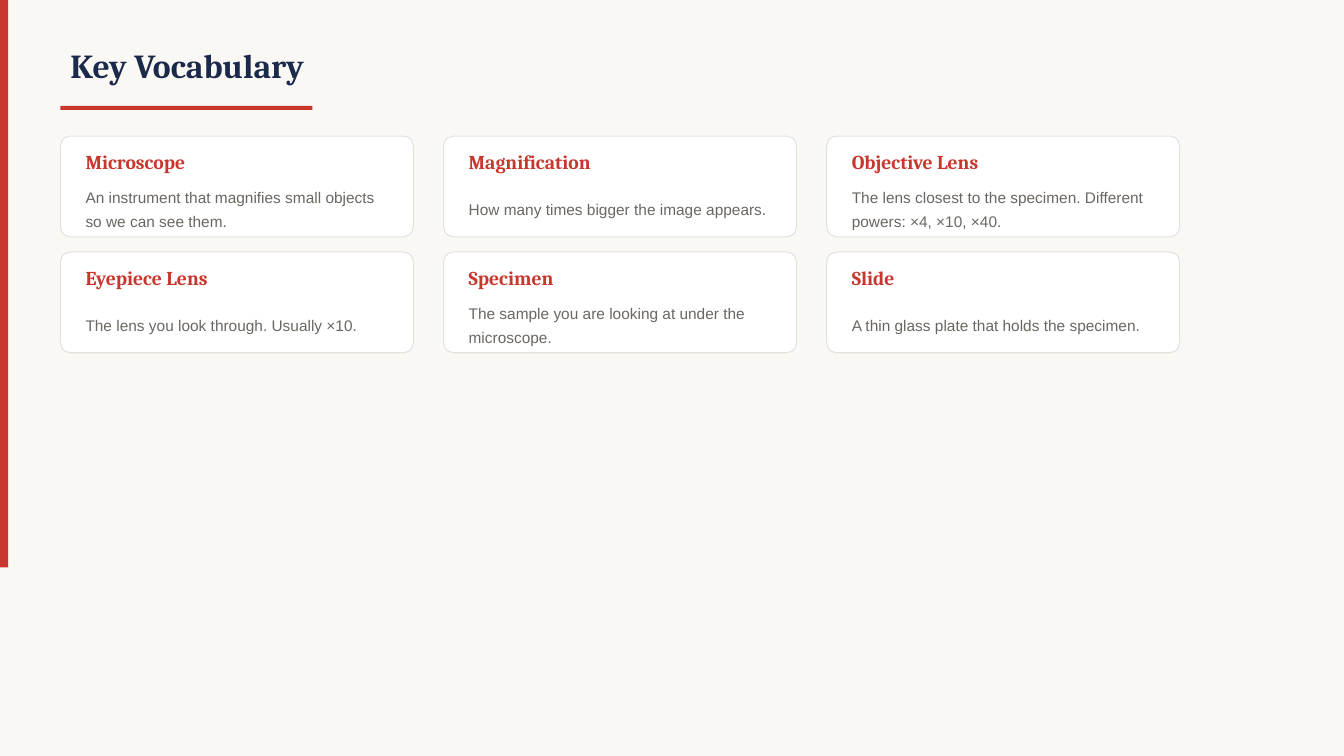
import pptx
import pptx.util
import pptx.dml.color
import pptx.enum.shapes
import pptx.enum.text

TITLE = "Key Vocabulary"
TERMS = [
    ("Microscope", "An instrument that magnifies small objects so we can see them."),
    ("Magnification", "How many times bigger the image appears."),
    ("Objective Lens", "The lens closest to the specimen. Different powers: ×4, ×10, ×40."),
    ("Eyepiece Lens", "The lens you look through. Usually ×10."),
    ("Specimen", "The sample you are looking at under the microscope."),
    ("Slide", "A thin glass plate that holds the specimen."),
]
COLORS = {
    "paper": "FAF8F5", "red": "C8372D", "navy": "1B2A4A",
    "white": "FFFFFF", "edge": "E5E2DC", "gray": "6B6660",
}
PX = 9144  # EMU per px, 100 px to the inch
WIDTH, HEIGHT = 1333, 750
LEFT, TOP = 60, 135
CARD_W, CARD_H = 350, 100
GAP_X, GAP_Y = 30, 15
COLS = 3
PAD = 15

KINDS = pptx.enum.shapes.MSO_SHAPE


def color(name):
    return pptx.dml.color.RGBColor.from_string(COLORS[name])


def scale(*box):
    return [pptx.util.Emu(n * PX) for n in box]


def add_box(slide, box, fill, kind=KINDS.RECTANGLE, edge=None):
    shape = slide.shapes.add_shape(kind, *scale(*box))
    shape.shadow.inherit = False
    shape.fill.solid()
    shape.fill.fore_color.rgb = color(fill)
    if edge:
        shape.line.color.rgb = color(edge)
        shape.line.width = pptx.util.Pt(0.75)
    else:
        shape.line.fill.background()
    return shape


def add_text(slide, text, box, size, tint, face="Cambria", bold=True, lead=None):
    frame = slide.shapes.add_textbox(*scale(*box)).text_frame
    frame.word_wrap = True
    frame.vertical_anchor = pptx.enum.text.MSO_ANCHOR.MIDDLE
    para = frame.paragraphs[0]
    para.line_spacing = lead
    run = para.add_run()
    run.text = text
    run.font.name = face
    run.font.size = pptx.util.Pt(size)
    run.font.bold = bold
    run.font.color.rgb = color(tint)


def add_card(slide, x, y, term, meaning):
    card = add_box(slide, (x, y, CARD_W, CARD_H), "white",
                   KINDS.ROUNDED_RECTANGLE, "edge")
    card.adjustments[0] = 0.1
    inner = CARD_W - 2 * PAD
    add_text(slide, term, (x + PAD, y + 8, inner, 35), 14, "red")
    add_text(slide, meaning, (x + PAD, y + 45, inner, 50), 11, "gray",
             face="Arial", bold=False, lead=1.3)


def main():
    deck = pptx.Presentation()
    deck.slide_width, deck.slide_height = scale(WIDTH, HEIGHT)
    slide = deck.slides.add_slide(deck.slide_layouts[6])
    slide.background.fill.solid()
    slide.background.fill.fore_color.rgb = color("paper")

    add_box(slide, (0, 0, 8, 563), "red")
    add_text(slide, TITLE, (LEFT, 30, 1000, 70), 24, "navy")
    add_box(slide, (LEFT, 105, 250, 4), "red")

    for i, (term, meaning) in enumerate(TERMS):
        row, col = divmod(i, COLS)
        add_card(slide, LEFT + col * (CARD_W + GAP_X),
                 TOP + row * (CARD_H + GAP_Y), term, meaning)

    deck.save("out.pptx")


if __name__ == "__main__":
    main()
